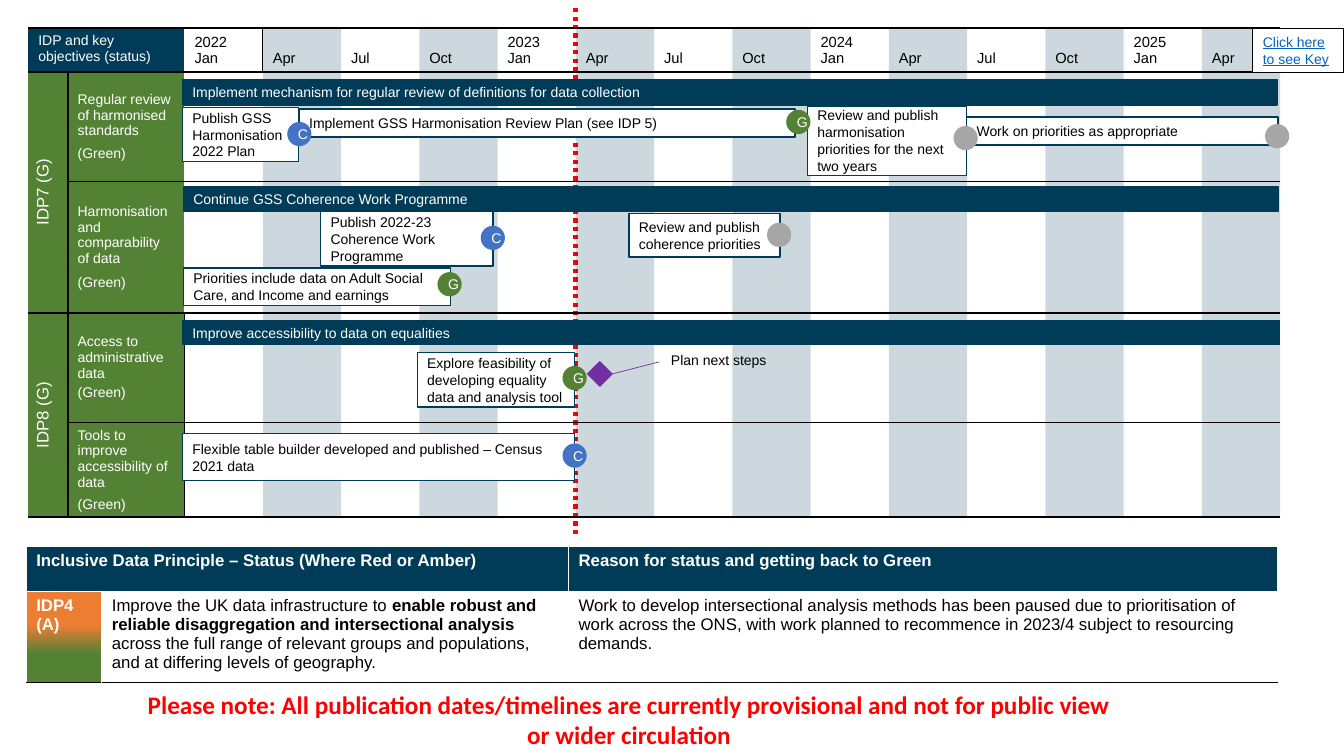
from dataclasses import dataclass

from lxml.etree import SubElement
from pptx import Presentation
from pptx.dml.color import RGBColor
from pptx.enum.dml import MSO_LINE
from pptx.enum.shapes import MSO_CONNECTOR, MSO_SHAPE
from pptx.enum.text import MSO_ANCHOR, PP_ALIGN
from pptx.oxml.ns import qn
from pptx.util import Pt

COLOURS = {
    "navy": "003C57", "green": "548235", "blue": "4472C4", "grey": "A6A6A6",
    "purple": "7030A0", "orange": "ED7D31", "red": "FF0000", "link": "0563C1",
    "black": "000000", "white": "FFFFFF",
}
PLAIN_TABLE_STYLE = "{2D5ABB26-0587-4C30-8999-92F81FD0307C}"
STATUS_COLOURS = {"C": "blue", "G": "green", "": "grey"}
QUARTERS = ["Jan", "Apr", "Jul", "Oct"]
QUARTER_COUNT = 14
FIRST_YEAR = 2022
HEADER_HEIGHT = 31
GROUP_WIDTH, LABEL_WIDTH, QUARTER_WIDTH = 28.1, 83.5, 55.9
MARKER_SIZE = 17.3


@dataclass
class Box:
    left: float
    top: float
    width: float
    height: float

    def inner(self, left, top, width, height):
        return Box(self.left + left, self.top + top, width, height)

    def lengths(self):
        return [Pt(value) for value in (self.left, self.top, self.width, self.height)]


LANES = [
    dict(label="Regular review of harmonised standards", gap=5, height=78.5,
         bar=("Implement mechanism for regular review of definitions for data collection",
              (-1.5, 5.7, 782, 18)),
         tasks=[("Publish GSS Harmonisation 2022 Plan", (-1.5, 25.8, 82.8, 38.2)),
                ("Implement GSS Harmonisation Review Plan (see IDP 5)", (82, 26.6, 354.2, 20.2)),
                ("Review and publish harmonisation priorities for the next two years",
                 (444.9, 24.4, 113.8, 49.7)),
                ("Work on priorities as appropriate", (558.7, 32.3, 222.5, 20.2))],
         markers=[("C", 73.4, 35.9), ("G", 429.8, 27.3), ("", 549.3, 38.8), ("", 771.8, 37.4)]),
    dict(label="Harmonisation and comparability of data", gap=6, height=93.6,
         bar=("Continue GSS Coherence Work Programme", (-0.8, 3.5, 782, 18)),
         tasks=[("Publish 2022-23 Coherence Work Programme", (97.2, 21.5, 123.1, 38.9)),
                ("Review and publish coherence priorities", (317.5, 22.9, 108, 31)),
                ("Priorities include data on Adult Social Care, and Income and earnings",
                 (-0.8, 61.8, 190.8, 26.6))],
         markers=[("C", 211.6, 31.6), ("", 416.1, 29.4), ("G", 180.7, 64.7)]),
    dict(label="Access to administrative data", gap=3, height=78.5,
         bar=("Improve accessibility to data on equalities", (-1.5, 5.7, 783.4, 17.3)),
         tasks=[("Explore feasibility of developing equality data and analysis tool",
                 (166.3, 28.7, 112.3, 38.9))],
         markers=[("G", 270, 38.1)]),
    dict(label="Tools to improve accessibility of data", gap=4.5, height=67.8, bar=None,
         tasks=[("Flexible table builder developed and published – Census 2021 data",
                 (-1.5, 7.8, 280.1, 33.8))],
         markers=[("C", 270, 15)]),
]


def colour(name):
    return RGBColor.from_string(COLOURS[name])


def write_text(frame, paragraphs, font="Arial", size=10, text_colour="black", bold=False,
               underline=False, align=PP_ALIGN.LEFT, gap=0):
    frame.word_wrap = True
    for index, content in enumerate(paragraphs):
        paragraph = frame.paragraphs[0] if index == 0 else frame.add_paragraph()
        paragraph.alignment = align
        paragraph.space_before = Pt(gap if index else 0)
        runs = [(content, bold)] if isinstance(content, str) else content
        for text, run_bold in runs:
            run = paragraph.add_run()
            run.text = text
            run.font.name = font
            run.font.size = Pt(size)
            run.font.bold = run_bold
            run.font.underline = underline
            run.font.color.rgb = colour(text_colour)


def add_block(slide, box, fill, line=None, text="", preset=MSO_SHAPE.RECTANGLE,
              line_width=1, anchor=MSO_ANCHOR.MIDDLE, **text_format):
    shape = slide.shapes.add_shape(preset, *box.lengths())
    shape.shadow.inherit = False
    shape.fill.solid()
    shape.fill.fore_color.rgb = colour(fill)
    if line:
        shape.line.color.rgb = colour(line)
        shape.line.width = Pt(line_width)
    else:
        shape.line.fill.background()
    if text:
        shape.text_frame.vertical_anchor = anchor
        write_text(shape.text_frame, [text], **text_format)
    return shape


def add_label(slide, box, text, anchor=MSO_ANCHOR.TOP, **text_format):
    frame = slide.shapes.add_textbox(*box.lengths()).text_frame
    frame.vertical_anchor = anchor
    write_text(frame, [text], align=PP_ALIGN.CENTER, **text_format)


def add_line(slide, start, end, line_colour, width):
    points = [Pt(value) for value in (*start, *end)]
    connector = slide.shapes.add_connector(MSO_CONNECTOR.STRAIGHT, *points)
    connector.line.color.rgb = colour(line_colour)
    connector.line.width = Pt(width)
    SubElement(connector._element.spPr, qn("a:effectLst"))
    return connector


def add_plain_table(slide, box, widths, heights):
    table = slide.shapes.add_table(len(heights), len(widths), *box.lengths()).table
    table.first_row = table.horz_banding = False
    table._tbl.tblPr.find(qn("a:tableStyleId")).text = PLAIN_TABLE_STYLE
    for column, width in zip(table.columns, widths):
        column.width = Pt(width)
    for row, height in zip(table.rows, heights):
        row.height = Pt(height)
    return table


def fill_cell(cell, fill=None, alpha=None):
    if fill is None:
        cell.fill.background()
        return
    cell.fill.solid()
    cell.fill.fore_color.rgb = colour(fill)
    if alpha:
        tint = cell._tc.tcPr.find(f"{qn('a:solidFill')}/{qn('a:srgbClr')}")
        SubElement(tint, qn("a:alpha"), val=str(alpha * 1000))


def set_borders(cell, **borders):
    properties = cell._tc.get_or_add_tcPr()
    ordered = [side for side in "LRTB" if side in borders]
    for index, side in enumerate(ordered):
        name, width = borders[side]
        line = SubElement(properties, qn(f"a:ln{side}"), w=str(int(Pt(width))))
        solid = SubElement(line, qn("a:solidFill"))
        SubElement(solid, qn("a:srgbClr"), val=COLOURS[name])
        properties.insert(index, line)


def add_timeline_grid(slide, box):
    widths = [GROUP_WIDTH, LABEL_WIDTH] + [QUARTER_WIDTH] * QUARTER_COUNT
    heights = [HEADER_HEIGHT] + [lane["height"] for lane in LANES]
    table = add_plain_table(slide, box, widths, heights)
    thick, thin = ("black", 1.5), ("black", 1)
    for row in range(len(heights)):
        for column in range(len(widths)):
            cell = table.cell(row, column)
            if column < 2:
                fill_cell(cell, "green" if row else "navy")
            elif column % 2:
                fill_cell(cell, "navy", alpha=20)
            else:
                fill_cell(cell)
            sides = {"T": thick, "B": thick}
            if column == 0 and row:
                sides["R"] = thick
            if (column == 1 and row != 1 and row != 2) or (column == 2 and row == 0):
                sides["R"] = thin
            set_borders(cell, **sides)
    heading = table.cell(0, 0)
    heading.merge(table.cell(0, 1))
    write_text(heading.text_frame, ["IDP and key objectives (status)"], text_colour="white")
    for quarter in range(QUARTER_COUNT):
        cell = table.cell(0, quarter + 2)
        cell.vertical_anchor = MSO_ANCHOR.BOTTOM
        years, month = divmod(quarter, len(QUARTERS))
        lines = [QUARTERS[month]] if month else [str(FIRST_YEAR + years), QUARTERS[month]]
        write_text(cell.text_frame, lines, size=10.5)
    for row, group in ((1, "IDP7 (G)"), (3, "IDP8 (G)")):
        cell = table.cell(row, 0)
        cell.merge(table.cell(row + 1, 0))
        cell._tc.tcPr.set("vert", "vert270")
        write_text(cell.text_frame, [group], size=12, text_colour="white", align=PP_ALIGN.CENTER)
    for row, lane in enumerate(LANES, 1):
        cell = table.cell(row, 1)
        cell.vertical_anchor = MSO_ANCHOR.MIDDLE
        write_text(cell.text_frame, [lane["label"], "(Green)"], text_colour="white", gap=lane["gap"])


def add_lane(slide, box, lane):
    if lane["bar"]:
        text, place = lane["bar"]
        add_block(slide, box.inner(*place), "navy", "navy", text, text_colour="white")
    for text, place in lane["tasks"]:
        add_block(slide, box.inner(*place), "white", "navy", text)
    for status, left, top in lane["markers"]:
        add_block(slide, box.inner(left, top, MARKER_SIZE, MARKER_SIZE), STATUS_COLOURS[status],
                  text=status, preset=MSO_SHAPE.FLOWCHART_CONNECTOR, text_colour="white",
                  align=PP_ALIGN.CENTER)


def add_next_steps(slide, box):
    milestone = add_block(slide, box.inner(288, 35.2, MARKER_SIZE, MARKER_SIZE), "purple", "purple",
                          preset=MSO_SHAPE.DIAMOND)
    add_label(slide, box.inner(314.6, 24.4, 133.9, 19.4), "Plan next steps", MSO_ANCHOR.MIDDLE)
    start = (box.left + 305.3, box.top + 43.8)
    end = (box.left + 339.1, box.top + 35.2)
    add_line(slide, start, end, "purple", 0.5).begin_connect(milestone, 3)


def add_timeline(slide, box):
    today = add_line(slide, (box.left + 390.9, box.top - 14.4),
                     (box.left + 390.9, box.top + 363.6), "red", 3)
    today.line.dash_style = MSO_LINE.ROUND_DOT
    add_timeline_grid(slide, box)
    label_width = GROUP_WIDTH + LABEL_WIDTH
    top = HEADER_HEIGHT
    for index, lane in enumerate(LANES):
        lane_box = box.inner(label_width, top, box.width - label_width, lane["height"])
        add_lane(slide, lane_box, lane)
        if index == 2:
            add_next_steps(slide, lane_box)
        top += lane["height"]
    add_block(slide, box.inner(874.8, 0, 64.8, 31.7), "white", "black", "Click here to see Key",
              line_width=0.75, anchor=MSO_ANCHOR.TOP, text_colour="link", underline=True)


def add_status_table(slide, box):
    table = add_plain_table(slide, box, [54, 333.4, 506.2], [32.4, 65])
    table.cell(0, 0).merge(table.cell(0, 1))
    contents = [
        (0, 0, "Inclusive Data Principle – Status (Where Red or Amber)"),
        (0, 2, "Reason for status and getting back to Green"),
        (1, 0, "IDP4 (A)"),
        (1, 1, [("Improve the UK data infrastructure to ", False),
                ("enable robust and reliable disaggregation and intersectional analysis ", True),
                ("across the full range of relevant groups and populations, "
                 "and at differing levels of geography.", False)]),
        (1, 2, [("Work to develop intersectional analysis methods has been paused due to "
                 "prioritisation of work across the ONS, with work planned to recommence in "
                 "2023/4 subject to resourcing demands.", False)]),
    ]
    for row, column, content in contents:
        cell = table.cell(row, column)
        heading = isinstance(content, str)
        fill_cell(cell, "white" if row else "navy")
        write_text(cell.text_frame, [content], size=12, bold=heading,
                   text_colour="white" if heading else "black")
        edge = ("white", 1)
        set_borders(cell, L=edge, R=edge, T=edge, B=("black", 1) if row else edge)
    fill = table.cell(1, 0).fill
    fill.gradient()
    fill.gradient_angle = 270
    for stop, name, position in zip(fill.gradient_stops, ("orange", "green"), (0.37, 0.68)):
        stop.color.rgb = colour(name)
        stop.position = position


def main():
    presentation = Presentation()
    presentation.slide_width, presentation.slide_height = Pt(960), Pt(540)
    slide = presentation.slides.add_slide(presentation.slide_layouts[6])
    add_timeline(slide, Box(20.2, 20.2, 894.2, 349.4))
    add_status_table(slide, Box(18.7, 390.2, 893.6, 97.4))
    add_label(slide, Box(92.2, 488.9, 714.2, 51.1),
              "Please note: All publication dates/timelines are currently provisional and not "
              "for public view or wider circulation",
              font="Calibri", size=18, text_colour="red", bold=True)
    presentation.save("out.pptx")


if __name__ == "__main__":
    main()
